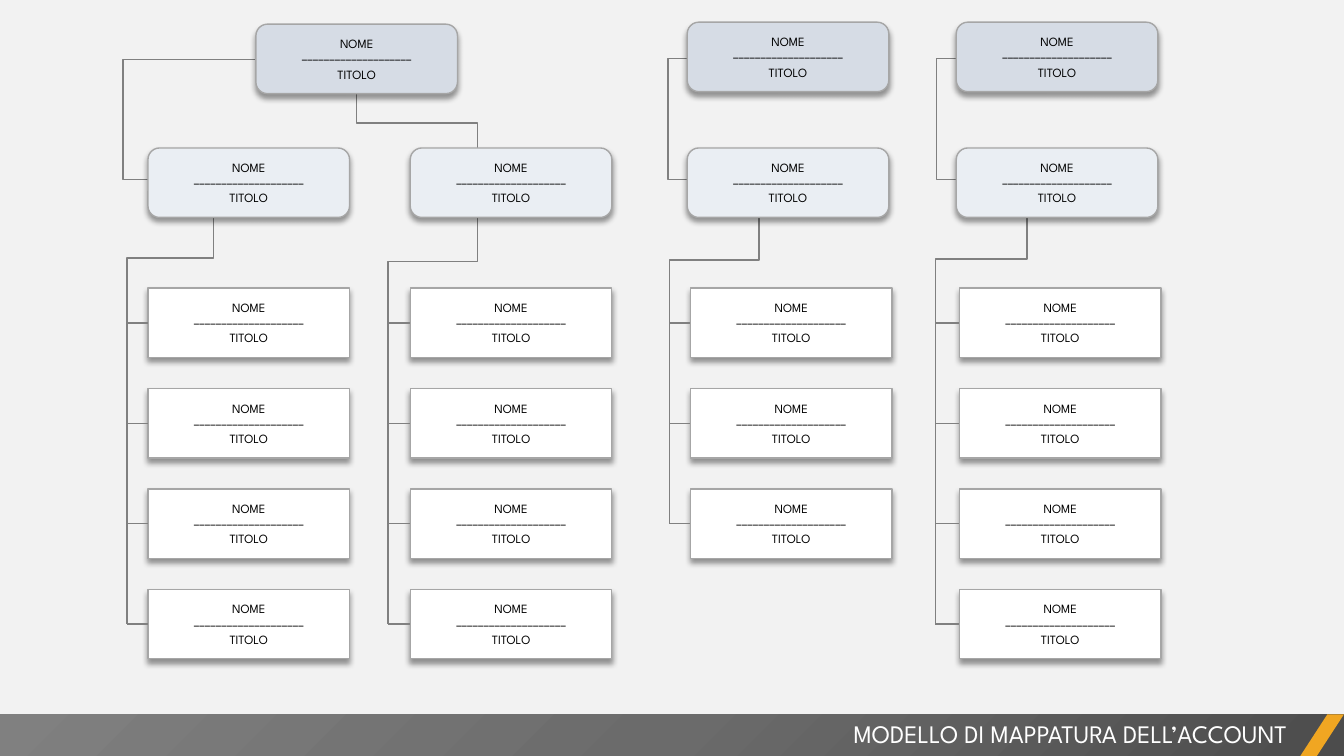
"""Build the account mapping slide: four reporting lines above a title bar."""
from lxml.etree import SubElement
from pptx import Presentation
from pptx.dml.color import RGBColor
from pptx.enum.shapes import MSO_CONNECTOR, MSO_SHAPE
from pptx.enum.text import MSO_ANCHOR, MSO_AUTO_SIZE, PP_ALIGN
from pptx.oxml import parse_xml
from pptx.oxml.ns import nsdecls, qn
from pptx.util import Cm, Pt

COLORS = {
    "page": "F2F2F2",
    "director": "D6DCE5",
    "manager": "EAEEF3",
    "white": "FFFFFF",
    "border": "A6A6A6",
    "line": "808080",
    "text": "000000",
    "accent": "F0A622",
    "bar_dark": "4C4C4C",
    "bar_middle": "6B6B6B",
    "bar_light": "808080",
}
RGB = {name: RGBColor.from_string(value) for name, value in COLORS.items()}
FONT = "League Spartan"
BOX_WIDTH, BOX_HEIGHT = 5.08, 1.75
MANAGER_TOP, TRUNK_TOP = 3.73, 4.7
STAFF_TOP, STAFF_PITCH = 7.26, 2.53
PAGE_WIDTH, BAR_TOP, BAR_HEIGHT = 33.87, 18, 1.05


def add_person_box(preset, left, top, color):
    box = page.shapes.add_shape(preset, Cm(left), Cm(top), Cm(BOX_WIDTH), Cm(BOX_HEIGHT))
    box.fill.solid()
    box.fill.fore_color.rgb = RGB[color]
    box.line.color.rgb = RGB["border"]
    box.line.width = Pt(1)
    box.shadow.inherit = False
    effects = box.element.spPr.find(qn("a:effectLst"))
    effects.append(parse_xml(
        f'<a:outerShdw {nsdecls("a")} blurRad="50800" dist="38100" dir="5400000" algn="t" '
        f'rotWithShape="0"><a:srgbClr val="{COLORS["text"]}"><a:alpha val="40000"/>'
        '</a:srgbClr></a:outerShdw>'))
    frame = box.text_frame
    frame.word_wrap = True
    frame.vertical_anchor = MSO_ANCHOR.MIDDLE
    frame.margin_left = frame.margin_right = frame.margin_top = frame.margin_bottom = Cm(0.05)
    frame.text = "\n".join(["NOME", "–" * 20, "TITOLO"])
    for para in frame.paragraphs:
        para.alignment = PP_ALIGN.CENTER
        para.font.name = FONT
        para.font.size = Pt(9)
        para.font.color.rgb = RGB["text"]
    return box


def add_line(kind, begin_x, begin_y, end_x, end_y):
    line = page.shapes.add_connector(kind, Cm(begin_x), Cm(begin_y), Cm(end_x), Cm(end_y))
    line.line.color.rgb = RGB["line"]
    line.line.width = Pt(1)
    SubElement(line.element.spPr, qn("a:effectLst"))
    return line


deck = Presentation()
deck.slide_width, deck.slide_height = Cm(PAGE_WIDTH), Cm(19.05)
page = deck.slides.add_slide(deck.slide_layouts[5])
page.background.fill.solid()
page.background.fill.fore_color.rgb = RGB["page"]

bar = page.shapes.add_shape(
    MSO_SHAPE.RECTANGLE, 0, Cm(BAR_TOP), Cm(PAGE_WIDTH), Cm(BAR_HEIGHT))
bar.shadow.inherit = False
bar.line.fill.background()
bar.fill.background()
stops = "".join(
    f'<a:gs pos="{position}"><a:srgbClr val="{COLORS[name]}"/></a:gs>'
    for position, name in [(0, "bar_dark"), (50000, "bar_middle"), (100000, "bar_light")])
bar.element.spPr.replace(bar.element.spPr.find(qn("a:noFill")), parse_xml(
    f'<a:gradFill {nsdecls("a")} rotWithShape="1"><a:gsLst>{stops}</a:gsLst>'
    '<a:path path="circle"><a:fillToRect l="100000" t="100000"/></a:path></a:gradFill>'))

accent = page.shapes.add_shape(
    MSO_SHAPE.PARALLELOGRAM, Cm(32.77), Cm(BAR_TOP), Cm(1.1), Cm(BAR_HEIGHT))
accent.adjustments[0] = 0.65
accent.shadow.inherit = False
accent.line.fill.background()
accent.fill.solid()
accent.fill.fore_color.rgb = RGB["accent"]

title = page.shapes.title
accent.element.addnext(title.element)
title.left, title.top, title.width, title.height = Cm(13.34), Cm(17.98), Cm(19.35), Cm(1.03)
title.text_frame.text = "MODELLO DI MAPPATURA DELL’ACCOUNT"
title.text_frame.word_wrap = True
title.text_frame.auto_size = MSO_AUTO_SIZE.SHAPE_TO_FIT_TEXT
title.text_frame.vertical_anchor = MSO_ANCHOR.TOP
heading = title.text_frame.paragraphs[0]
heading.alignment = PP_ALIGN.RIGHT
span = heading.runs[0]
span.font.name = FONT
span.font.size = Pt(18)
span.font.color.rgb = RGB["white"]

# manager left, staff left, trunk x, drop x, bend y, staff count
columns = [
    (3.73, 3.73, 3.2, 5.38, 6.5, 4),
    (10.34, 10.34, 9.78, 12.04, 6.58, 4),
    (17.32, 17.4, 16.87, 19.13, 6.55, 3),
    (24.1, 24.18, 23.57, 25.88, 6.53, 4),
]
directors = [(6.45, 0.61), (17.32, 0.56), (24.1, 0.56)]

side_links = [
    (6.96, 1.5, 3.78, 4.52, 3.1),
    (19.96, 1.47, 17.42, 4.52, 16.84),
    (26.75, 1.47, 24.21, 4.52, 23.6),
]
down_links = [(8.99, 1.57, 12.04, 4.62, 3.1)]
for manager_left, staff_left, trunk_x, drop_x, bend_y, count in columns:
    trunk_end = STAFF_TOP + BOX_HEIGHT / 2 + STAFF_PITCH * (count - 1)
    down_links.append((drop_x, TRUNK_TOP, trunk_x, trunk_end, bend_y))

elbows = []
for begin_x, begin_y, end_x, end_y, bend_x in side_links:
    elbow = add_line(MSO_CONNECTOR.ELBOW, begin_x, begin_y, end_x, end_y)
    elbows.append((elbow, (bend_x - begin_x) / (end_x - begin_x)))
for begin_x, begin_y, end_x, end_y, bend_y in down_links:
    center_x, center_y = (begin_x + end_x) / 2, (begin_y + end_y) / 2
    half_run, half_drop = (end_x - begin_x) / 2, (end_y - begin_y) / 2
    elbow = add_line(MSO_CONNECTOR.ELBOW, center_x - half_drop, center_y + half_run,
                     center_x + half_drop, center_y - half_run)
    elbow.element.spPr.find(qn("a:xfrm")).set("rot", "5400000")
    elbows.append((elbow, (bend_y - begin_y) / (end_y - begin_y)))
for elbow, bend in elbows:
    guides = elbow.element.spPr.find(qn("a:prstGeom")).find(qn("a:avLst"))
    SubElement(guides, qn("a:gd"), name="adj1", fmla=f"val {round(bend * 100000)}")

for left, top in directors:
    add_person_box(MSO_SHAPE.FLOWCHART_ALTERNATE_PROCESS, left, top, "director")
for manager_left, staff_left, trunk_x, drop_x, bend_y, count in columns:
    add_person_box(MSO_SHAPE.FLOWCHART_ALTERNATE_PROCESS, manager_left, MANAGER_TOP, "manager")
    for row in range(count):
        top = STAFF_TOP + row * STAFF_PITCH
        middle = top + BOX_HEIGHT / 2
        box = add_person_box(MSO_SHAPE.RECTANGLE, staff_left, top, "white")
        branch = add_line(MSO_CONNECTOR.STRAIGHT, trunk_x, middle, staff_left, middle)
        branch.end_connect(box, 1)

deck.save("out.pptx")
